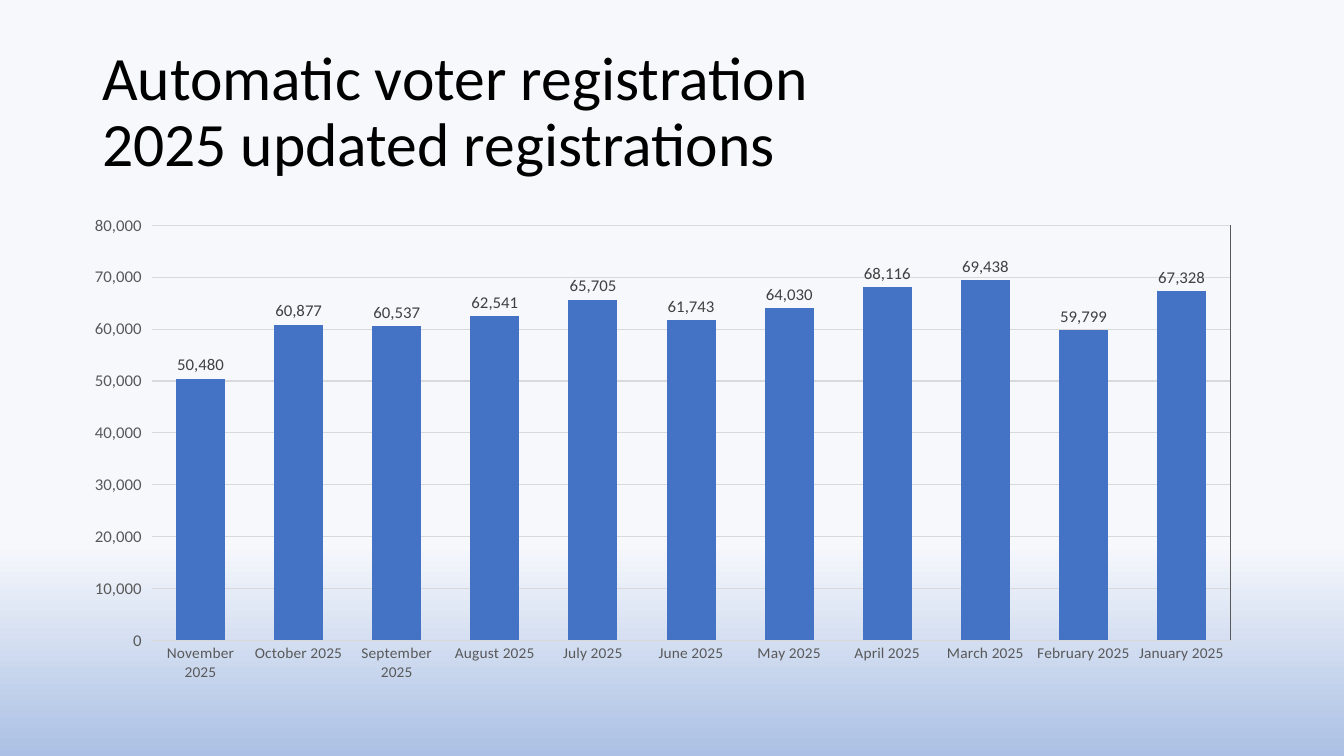
from lxml import etree
from pptx import Presentation
from pptx.chart.data import CategoryChartData
from pptx.dml.color import RGBColor
from pptx.enum.chart import XL_CHART_TYPE, XL_LABEL_POSITION, XL_TICK_LABEL_POSITION, XL_TICK_MARK
from pptx.enum.text import MSO_ANCHOR
from pptx.oxml import parse_xml
from pptx.oxml.ns import nsdecls
from pptx.util import Pt

COLUMN = XL_CHART_TYPE.COLUMN_CLUSTERED
OUTSIDE_END = XL_LABEL_POSITION.OUTSIDE_END
LABELS_HIGH = XL_TICK_LABEL_POSITION.HIGH
NO_TICK = XL_TICK_MARK.NONE
MIDDLE = MSO_ANCHOR.MIDDLE

FONT = "Calibri"
NUMBER_FORMAT = "#,##0"
COLORS = {
    "sky": "F6F8FC", "horizon": "ABC0E4", "title": "000000", "bar": "4472C4",
    "grid": "D9D9D9", "axis": "595959", "label": "404040",
}
REGISTRATIONS = {
    "January": 67328, "February": 59799, "March": 69438, "April": 68116,
    "May": 64030, "June": 61743, "July": 65705, "August": 62541,
    "September": 60537, "October": 60877, "November": 50480,
}
PLOT_AREA = {"x": 0.051, "y": 0.051, "w": 0.931, "h": 0.886}


def color(name):
    return RGBColor.from_string(COLORS[name])


def style_font(font, size, name):
    font.name = FONT
    font.size = Pt(size)
    font.color.rgb = color(name)


def style_line(line, name):
    line.color.rgb = color(name)
    line.width = Pt(0.75)


def add_background(s):
    fill = s.background.fill
    fill.gradient()
    fill.gradient_angle = 270
    for stop, position, name in zip(fill.gradient_stops, (0.72, 1), ("sky", "horizon")):
        stop.position = position
        stop.color.rgb = color(name)


def add_title(s, text, left, top, width, height):
    tf = s.shapes.add_textbox(Pt(left), Pt(top), Pt(width), Pt(height)).text_frame
    tf.word_wrap = True
    tf.vertical_anchor = MIDDLE
    tf.text = text
    p = tf.paragraphs[0]
    p.line_spacing = 0.9
    for r in p.runs:
        style_font(r.font, 44, "title")


def set_plot_area(chart):
    layout = parse_xml(
        f'<c:layout {nsdecls("c")}><c:manualLayout><c:layoutTarget val="inner"/>'
        '<c:xMode val="edge"/><c:yMode val="edge"/></c:manualLayout></c:layout>')
    for key, value in PLOT_AREA.items():
        etree.SubElement(layout[0], layout[0][0].tag.replace("layoutTarget", key)).set("val", str(value))
    plot_area = chart.plots[0]._element.getparent()
    for old in plot_area.findall(layout.tag):
        plot_area.remove(old)
    plot_area.insert(0, layout)


def add_registrations_chart(s, left, top, width, height):
    data = CategoryChartData(number_format=NUMBER_FORMAT)
    data.categories = [f"{month} 2025" for month in REGISTRATIONS]
    data.add_series("Series 1", REGISTRATIONS.values())
    chart = s.shapes.add_chart(COLUMN, Pt(left), Pt(top), Pt(width), Pt(height), data).chart
    chart.has_legend = False
    chart.has_title = False
    style_font(chart.font, 10, "title")
    set_plot_area(chart)

    # Bars and their values
    plot = chart.plots[0]
    plot.gap_width = 100
    plot.overlap = -27
    plot.vary_by_categories = False
    fill = plot.series[0].format.fill
    fill.solid()
    fill.fore_color.rgb = color("bar")
    plot.has_data_labels = True
    labels = plot.data_labels
    labels.show_value = True
    labels.position = OUTSIDE_END
    labels.number_format = NUMBER_FORMAT
    labels.number_format_is_linked = False
    style_font(labels.font, 12, "label")

    # Axes: months run right to left, value labels stay on the left
    months, counts = chart.category_axis, chart.value_axis
    for axis, size, line in ((months, 11, "grid"), (counts, 12, "axis")):
        axis.major_tick_mark = axis.minor_tick_mark = NO_TICK
        style_font(axis.tick_labels.font, size, "axis")
        style_line(axis.format.line, line)
    months.reverse_order = True
    counts.minimum_scale = 0
    counts.maximum_scale = 80000
    counts.major_unit = 10000
    counts.tick_label_position = LABELS_HIGH
    counts.tick_labels.number_format = NUMBER_FORMAT
    counts.tick_labels.number_format_is_linked = False
    style_line(counts.major_gridlines.format.line, "grid")


def main():
    prs = Presentation()
    prs.slide_width, prs.slide_height = Pt(960), Pt(540)
    s = prs.slides.add_slide(prs.slide_layouts[6])
    add_background(s)
    add_title(s, "Automatic voter registration\v2025 updated registrations", 66, 28.75, 828, 104.4)
    add_registrations_chart(s, 66, 144, 828, 342.6)
    prs.save("out.pptx")


if __name__ == "__main__":
    main()
